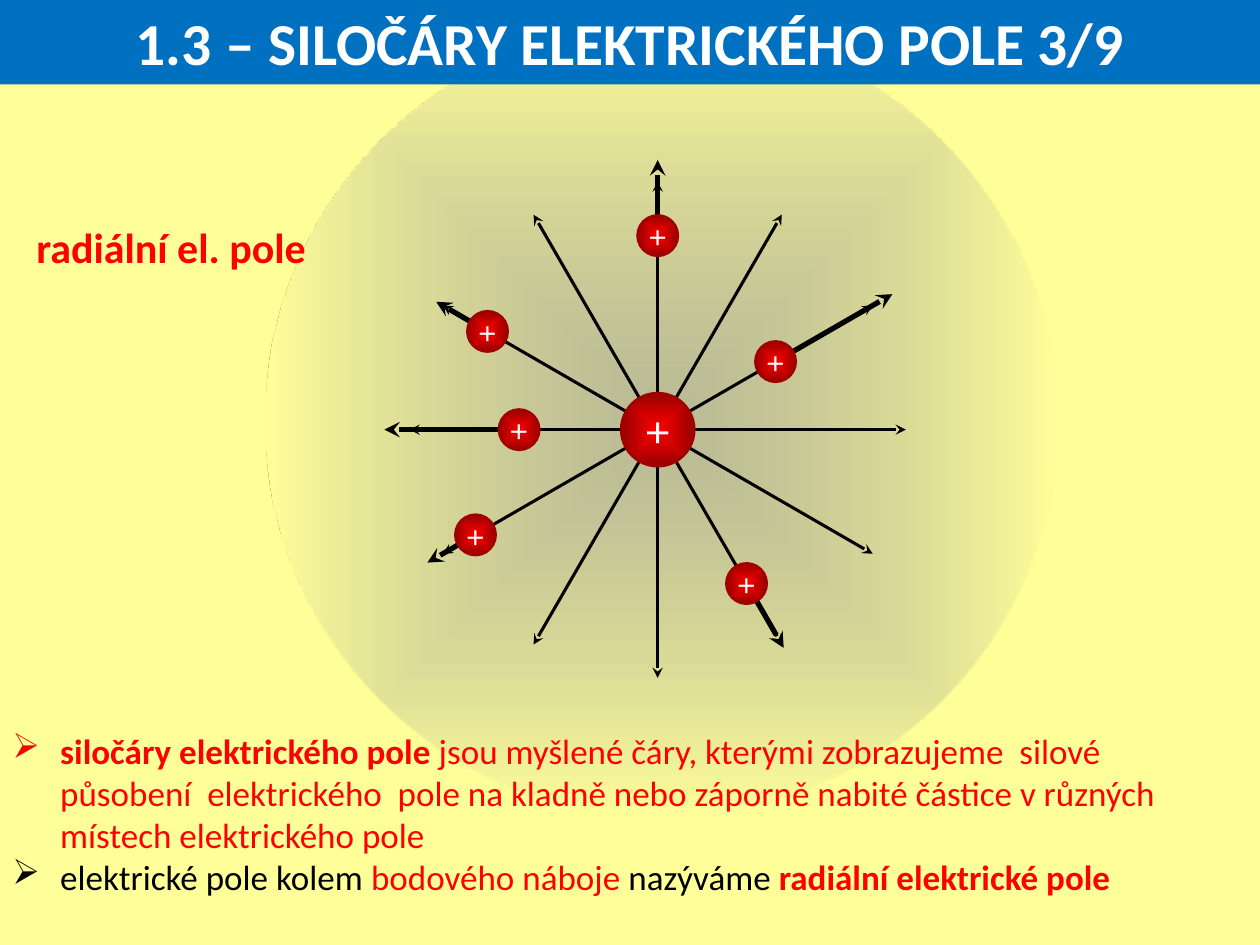
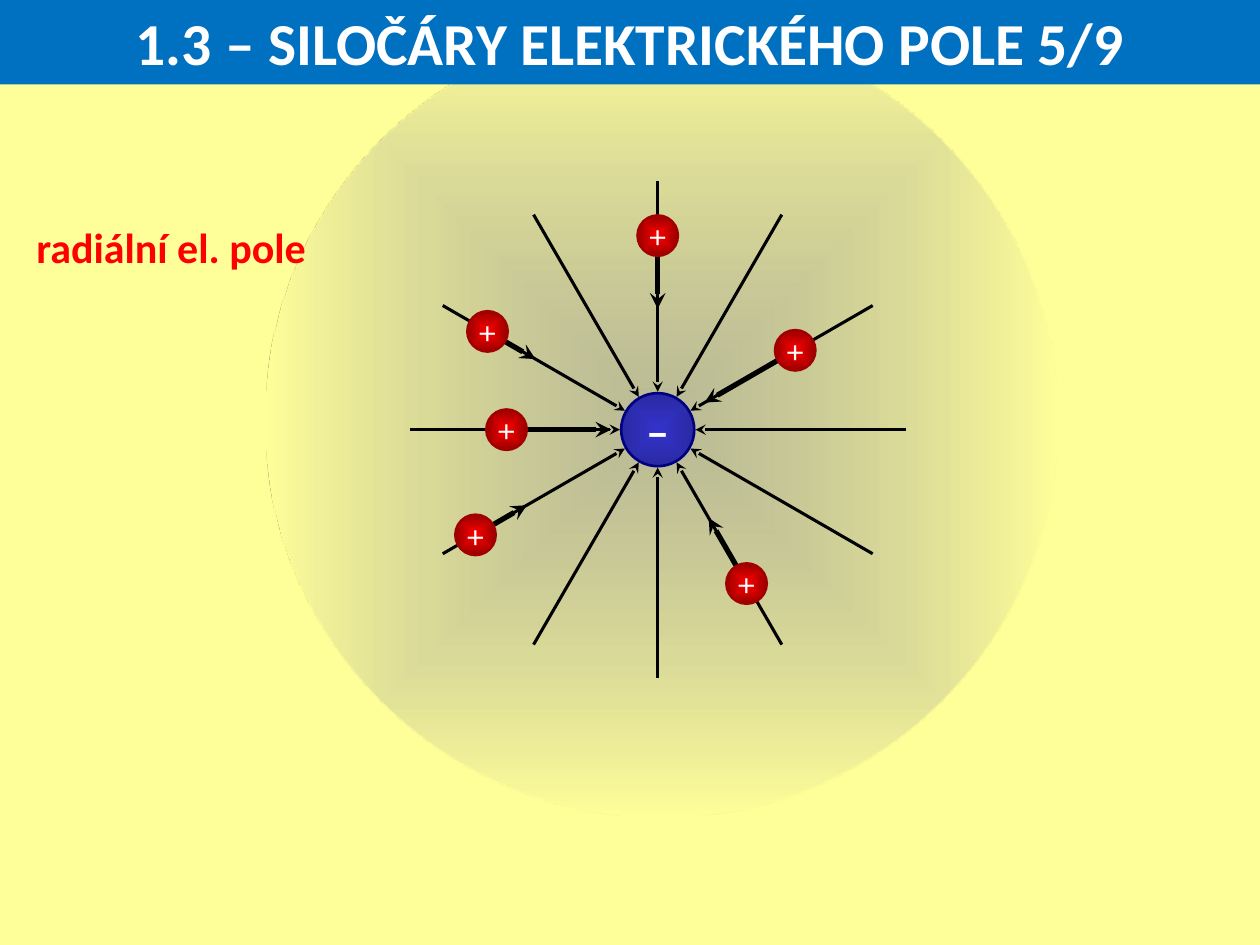
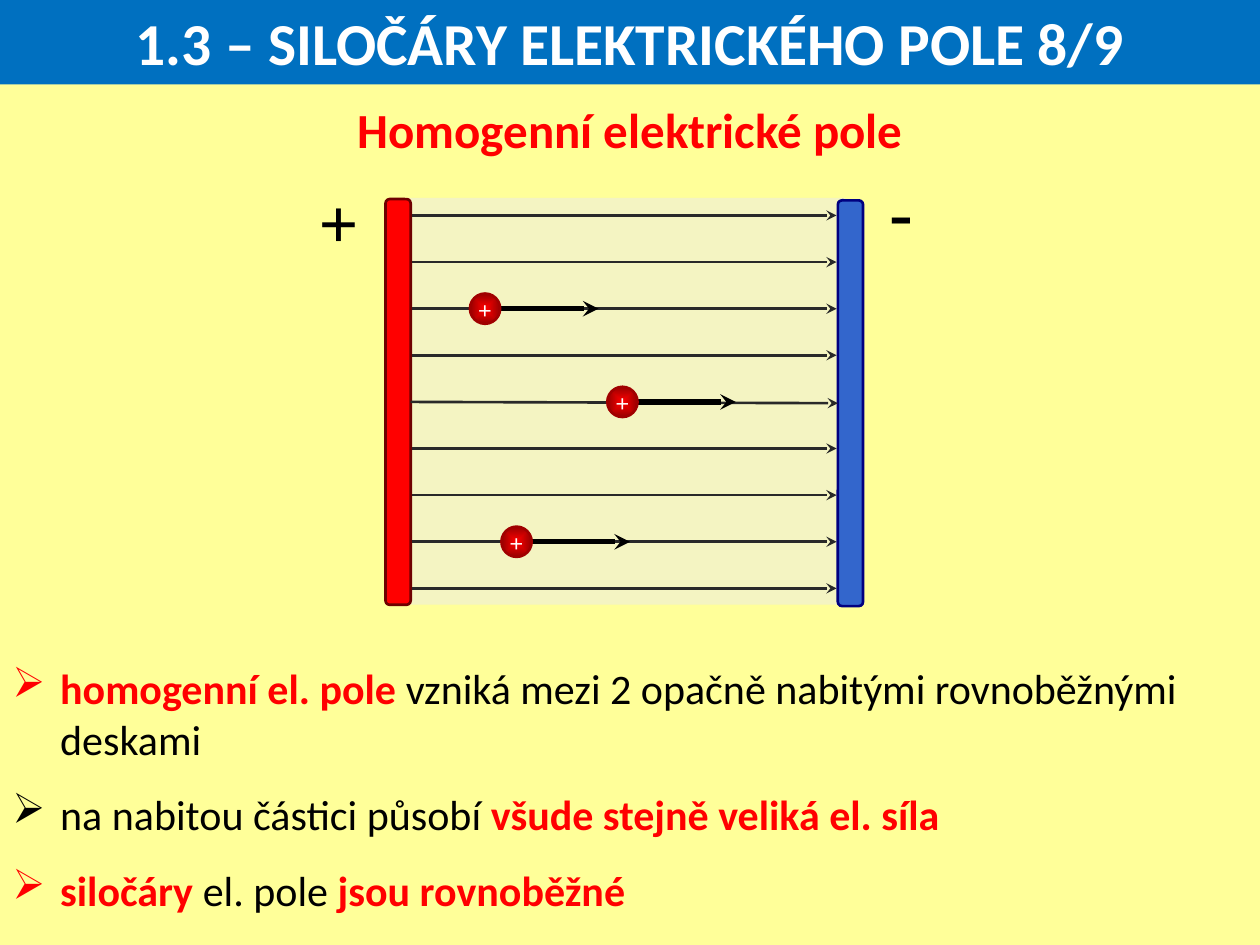
import math

from pptx import Presentation, util as u
from pptx.dml.color import RGBColor
from pptx.enum import shapes, text
from pptx.oxml import parse_xml
from pptx.oxml.ns import nsdecls

YELLOW, BLUE, RED, BLACK, WHITE = "FFFF99", "0070C0", "FF0000", "000000", "FFFFFF"
POSITIVE = {"stops": [("FF0000", 100), ("980000", 100)], "line": "A00000"}
NEGATIVE = {"stops": [("3333CC", 100), ("2929A3", 100)], "line": "000080"}
HALO_STOPS = [("969696", 65), (YELLOW, 100)]
TITLE = "1.3 – SILOČÁRY ELEKTRICKÉHO POLE "

CENTER_X, CENTER_Y = 5.22, 3.41
FIELD_RADIUS, NUCLEUS_RADIUS, PARTICLE_RADIUS = 1.97, 0.29, 0.16
TOP_LINE, LINE_GAP, LINE_COUNT = 1.71, 0.37, 9

PLAIN = {"color": BLACK}
KEY = {"color": RED, "bold": True}


def rgb(value):
    return RGBColor.from_string(value)


def box_of(left, top, width, height):
    return [u.Inches(value) for value in (left, top, width, height)]


def set_frame(frame, insets=(0.1, 0.05, 0.1, 0.05), **values):
    sides = ("left", "top", "right", "bottom")
    for side, inset in zip(sides, insets):
        setattr(frame, f"margin_{side}", u.Inches(inset))
    for name, value in values.items():
        setattr(frame, name, value)


def add_span(para, words, color=BLACK, **values):
    span = para.add_run()
    span.text = words
    span.font.color.rgb = rgb(color)
    for name, value in values.items():
        setattr(span.font, name, value)


def add_title(slide, page_number):
    """Format the title as a band in front of everything drawn so far."""
    title = slide.shapes.title
    title.left, title.top, title.width, title.height = box_of(0, 0, 10, 0.67)
    title.fill.solid()
    title.fill.fore_color.rgb = rgb(BLUE)
    set_frame(title.text_frame, vertical_anchor=text.MSO_ANCHOR.TOP,
              auto_size=text.MSO_AUTO_SIZE.NONE)
    para = title.text_frame.paragraphs[0]
    para.alignment = text.PP_ALIGN.CENTER
    add_span(para, f"{TITLE}{page_number}/9", WHITE,
             size=u.Pt(34), name="Calibri", bold=True)
    title.element.getparent().append(title.element)


def add_label(slide, at, words, size, color=RED, name="Calibri", wrap=True,
              align=text.PP_ALIGN.LEFT):
    box = slide.shapes.add_textbox(*box_of(*at))
    set_frame(box.text_frame, word_wrap=wrap,
              auto_size=text.MSO_AUTO_SIZE.SHAPE_TO_FIT_TEXT)
    para = box.text_frame.paragraphs[0]
    para.alignment = align
    add_span(para, words, color, size=u.Pt(size), name=name, bold=True)


def add_bullets(slide, at, size, items, spacings):
    """Each item is a list of (words, format) spans."""
    box = slide.shapes.add_textbox(*box_of(*at))
    frame = box.text_frame
    set_frame(frame, word_wrap=True, auto_size=text.MSO_AUTO_SIZE.SHAPE_TO_FIT_TEXT)
    for index, (spans, spacing) in enumerate(zip(items, spacings)):
        para = frame.add_paragraph() if index else frame.paragraphs[0]
        para.line_spacing = spacing
        props = para._p.get_or_add_pPr()
        props.set("marL", str(u.Inches(0.38)))
        props.set("indent", str(u.Inches(-0.38)))
        props.append(parse_xml(f'<a:buChar {nsdecls("a")} char="➢"/>'))
        for words, values in spans:
            add_span(para, words, size=u.Pt(size), name="Calibri", **values)


def add_shape(slide, kind, at, fill=None, line=None):
    shape = slide.shapes.add_shape(kind, *box_of(*at))
    shape.shadow.inherit = False
    if fill:
        shape.fill.solid()
        shape.fill.fore_color.rgb = rgb(fill)
    if line:
        shape.line.color.rgb = rgb(line)
        shape.line.width = u.Pt(1.5)
    else:
        shape.line.fill.background()
    return shape


def add_glowing_circle(slide, x, y, radius, stops, line=None):
    """Draw a circle whose gradient runs from its middle to its edge."""
    at = (x - radius, y - radius, 2 * radius, 2 * radius)
    circle = add_shape(slide, shapes.MSO_SHAPE.OVAL, at, line=line)
    marks = "".join(
        f'<a:gs pos="{place}"><a:srgbClr val="{color}">'
        f'<a:alpha val="{alpha * 1000}"/></a:srgbClr></a:gs>'
        for place, (color, alpha) in zip((0, 100000), stops))
    gradient = parse_xml(
        f'<a:gradFill {nsdecls("a")} rotWithShape="1"><a:gsLst>{marks}</a:gsLst>'
        '<a:path path="shape"><a:fillToRect l="50000" t="50000" r="50000" b="50000"/>'
        '</a:path></a:gradFill>')
    circle.element.spPr.insert(2, gradient)
    return circle


def add_charge(slide, x, y, radius, size, sign="+", look=POSITIVE, top_inset=0.06):
    circle = add_glowing_circle(slide, x, y, radius, **look)
    set_frame(circle.text_frame, (0.1, top_inset, 0.1, 0.04), word_wrap=False,
              vertical_anchor=text.MSO_ANCHOR.MIDDLE)
    para = circle.text_frame.paragraphs[0]
    para.alignment = text.PP_ALIGN.CENTER
    add_span(para, sign, WHITE, size=u.Pt(size), name="Montserrat")


def add_arrow(slide, start, end, width, color=BLACK):
    ends = [u.Inches(value) for value in (*start, *end)]
    arrow = slide.shapes.add_connector(shapes.MSO_CONNECTOR.STRAIGHT, *ends)
    arrow.line.color.rgb = rgb(color)
    arrow.line.width = u.Pt(width)
    arrow.line._get_or_add_ln().append(
        parse_xml(f'<a:tailEnd {nsdecls("a")} type="stealth"/>'))
    arrow.element.spPr.append(parse_xml(f'<a:effectLst {nsdecls("a")}/>'))
    return arrow


def polar(angle, distance):
    """Point at an angle in degrees, counted anticlockwise from the right."""
    turn = math.radians(angle)
    return (CENTER_X + distance * math.cos(turn), CENTER_Y - distance * math.sin(turn))


def add_radial_field(slide, line_start, line_end, nucleus, particles):
    """Each particle is (angle, distance from nucleus, distance of force tip)."""
    for angle in range(0, 360, 30):
        add_arrow(slide, polar(angle, line_start), polar(angle, line_end), 1.75)
    add_charge(slide, CENTER_X, CENTER_Y, NUCLEUS_RADIUS, **nucleus)
    for angle, distance, tip in particles:
        edge = distance + math.copysign(0.13, tip - distance)
        add_arrow(slide, polar(angle, edge), polar(angle, tip), 3)
    for angle, distance, _ in particles:
        add_charge(slide, *polar(angle, distance), PARTICLE_RADIUS, 20)


def add_radial_page(deck, page_number, bullets=None, **field):
    slide = deck.slides.add_slide(deck.slide_layouts[5])
    add_glowing_circle(slide, 5.25, 3.34, 3.14, HALO_STOPS)
    if bullets:
        add_bullets(slide, (0, 5.74, 10, 1.45), 20, bullets, [1.0] * len(bullets))
    add_radial_field(slide, **field)
    add_title(slide, page_number)
    add_label(slide, (0.19, 1.71, 2.37, 0.51), "radiální el. pole", 24)


def add_plate(slide, left, top, fill, line):
    plate = add_shape(slide, shapes.MSO_SHAPE.ROUNDED_RECTANGLE,
                      (left, top, 0.2, 3.22), fill, line)
    plate.adjustments[0] = 0.167
    return plate


def add_homogeneous_field(slide):
    left_plate = add_plate(slide, 3.06, 1.58, RED, "6E0000")
    right_plate = add_plate(slide, 6.65, 1.59, "3366CC", "000080")
    rows = [TOP_LINE + LINE_GAP * row for row in range(LINE_COUNT)]
    for row, y in enumerate(rows):
        arrow = add_arrow(slide, (3.27, y), (6.64, y), 1.5, "292929")
        if row == LINE_COUNT // 2:
            arrow.begin_connect(left_plate, 3)
            arrow.end_connect(right_plate, 1)
    for sign, at in (("+", (2.43, 1.37, 0.53, 0.77)), ("-", (6.96, 1.28, 0.39, 0.77))):
        add_label(slide, at, sign, 40, BLACK, "Times New Roman", wrap=False)
    for row, x in ((2, 3.85), (4, 4.94), (7, 4.1)):
        add_arrow(slide, (x + 0.11, rows[row]), (x + 0.9, rows[row]), 3)
        add_charge(slide, x, rows[row], 0.12, 15)


def add_homogeneous_page(deck, page_number):
    slide = deck.slides.add_slide(deck.slide_layouts[5])
    # EAEAEA at half strength over the yellow background
    add_shape(slide, shapes.MSO_SHAPE.RECTANGLE, (3.2, 1.57, 3.51, 3.23), "F4F4C2")
    add_bullets(slide, (0, 5.21, 10, 2.12), 24, [
        [("homogenní el. pole ", KEY),
         ("vzniká mezi 2 opačně nabitými rovnoběžnými deskami", PLAIN)],
        [("na nabitou částici působí ", PLAIN), ("všude stejně veliká el. síla", KEY)],
        [("siločáry", KEY), (" el. pole ", PLAIN), ("jsou rovnoběžné", KEY)],
    ], [1.0, 1.5, 1.5])
    add_homogeneous_field(slide)
    add_label(slide, (0, 0.74, 10, 0.57), "Homogenní elektrické pole", 28,
              align=text.PP_ALIGN.CENTER)
    add_title(slide, page_number)


def main():
    deck = Presentation()
    deck.slide_width, deck.slide_height = u.Inches(10), u.Inches(7.5)
    background = deck.slide_master.background.fill
    background.solid()
    background.fore_color.rgb = rgb(YELLOW)

    add_radial_page(
        deck, 3,
        bullets=[
            [("siločáry elektrického pole ", KEY),
             ("jsou myšlené čáry, kterými zobrazujeme  silové  působení  elektrického  "
              "pole na kladně nebo záporně nabité částice v různých místech "
              "elektrického pole", {"color": RED})],
            [("elektrické pole kolem ", PLAIN), ("bodového náboje ", {"color": RED}),
             ("nazýváme ", PLAIN), ("radiální elektrické pole", KEY)],
        ],
        line_start=0, line_end=FIELD_RADIUS, nucleus={"size": 28},
        particles=[(30, 1.08, 2.15), (150, 1.56, 2.03), (180, 1.1, 2.17),
                   (300, 1.41, 2.0), (90, 1.54, 2.14), (210, 1.67, 2.11)])
    add_radial_page(
        deck, 5,
        line_start=FIELD_RADIUS, line_end=0.3,
        nucleus={"size": 36, "sign": "-", "look": NEGATIVE, "top_inset": 0},
        particles=[(30, 1.26, 0.43), (150, 1.56, 1.12), (180, 1.2, 0.37),
                   (300, 1.41, 0.81), (90, 1.54, 0.96), (210, 1.67, 1.2)])
    add_homogeneous_page(deck, 8)
    deck.save("out.pptx")


if __name__ == "__main__":
    main()
